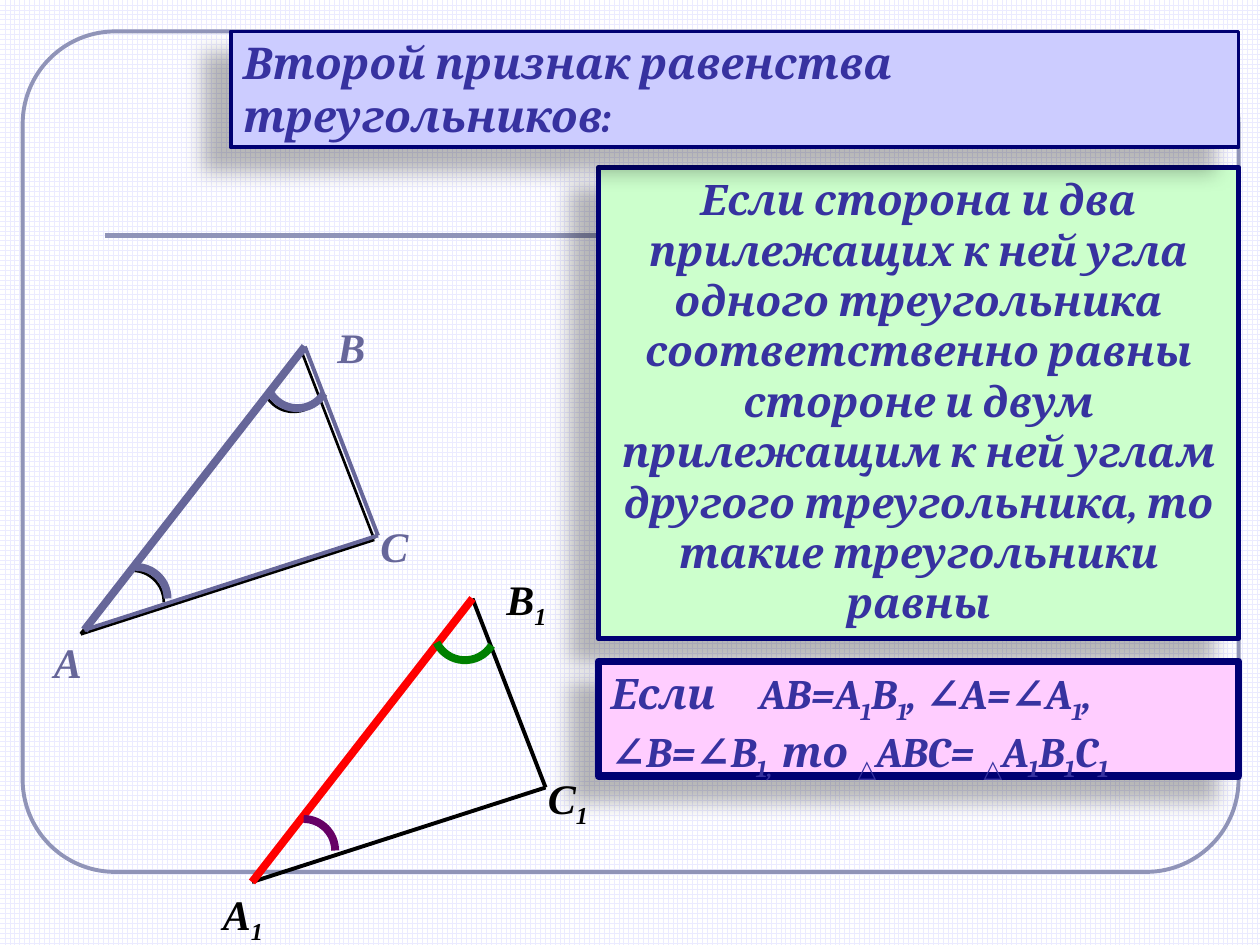
"""Build a geometry slide on the second congruence criterion for triangles."""
from dataclasses import dataclass
from math import cos, radians, sin

from lxml.etree import SubElement
from pptx import Presentation
from pptx.dml.color import RGBColor
from pptx.enum.dml import MSO_PATTERN
from pptx.enum.shapes import MSO_CONNECTOR, MSO_SHAPE
from pptx.enum.text import MSO_ANCHOR, MSO_AUTO_SIZE, PP_ALIGN
from pptx.oxml.ns import qn
from pptx.util import Inches, Pt

COLORS = {
    "grid": "EBEBFF", "white": "FFFFFF", "frame": "9094B8", "border": "000073",
    "text": "3732A0", "title": "CCCCFF", "rule": "CCFFCC", "formula": "FFCDFF",
    "black": "000000", "slate": "666699", "red": "FF0000", "purple": "660066",
    "green": "008000",
}
SIDE_B = (1.75, -2.25)
SIDE_C = (2.33, -0.75)
ARC_RADIUS = 0.25
ARC_STEPS = 16


@dataclass(frozen=True)
class Panel:
    box: tuple
    fill: str
    border: float
    text: str
    size: float
    alignment: PP_ALIGN
    anchor: MSO_ANCHOR = MSO_ANCHOR.TOP


@dataclass(frozen=True)
class Triangle:
    left: float
    bottom: float
    base_color: str
    side_color: str
    arc_a_color: str
    arc_b_color: str
    thin: float = 2.25
    thick: float = 4.5


@dataclass(frozen=True)
class Label:
    left: float
    top: float
    text: str
    color: str


TITLE = Panel((1.83, 0.25, 8, 0.92), "title", 2.25,
              "Второй признак равенства треугольников:", 25, PP_ALIGN.LEFT,
              MSO_ANCHOR.BOTTOM)
PANELS = [
    Panel((4.75, 1.33, 5.08, 3.74), "rule", 3,
          "Если сторона и два прилежащих к ней угла одного треугольника "
          "соответственно равны стороне и двум прилежащим к ней углам другого "
          "треугольника, то такие треугольники равны", 24, PP_ALIGN.CENTER),
    Panel((4.75, 5.25, 5.08, 0.91), "formula", 4.5,
          "Если\tAB=A_1_B_1_, ∠A=∠A_1_, ∠B=∠B_1,_ то _△_ABC= _△_A_1_B_1_C_1",
          24, PP_ALIGN.LEFT),
]
TRIANGLES = [
    Triangle(2, 7, "black", "red", "purple", "green"),
    Triangle(0.64, 5.03, "black", "black", "black", "black", thick=1.5),
    Triangle(0.67, 5, "slate", "slate", "slate", "slate"),
]
LABELS = [
    Label(1.67, 7, "A_1", "black"),
    Label(3.92, 4.5, "B_1", "black"),
    Label(4.25, 6.08, "C_1", "black"),
    Label(0.33, 5, "A", "slate"),
    Label(2.58, 2.5, "B", "slate"),
    Label(2.92, 4.08, "C", "slate"),
]


def color(name: str) -> RGBColor:
    return RGBColor.from_string(COLORS[name])


def set_line(shape, name: str, width: float) -> None:
    shape.line.color.rgb = color(name)
    shape.line.width = Pt(width)


def add_line(slide, start: tuple, end: tuple, name: str, width: float) -> None:
    points = [Inches(value) for value in (*start, *end)]
    connector = slide.shapes.add_connector(MSO_CONNECTOR.STRAIGHT, *points)
    set_line(connector, name, width)
    SubElement(connector._element.spPr, qn("a:effectLst"))


def add_arc(slide, center: tuple, angles: tuple, name: str, width: float) -> None:
    first, last = angles
    turns = [radians(first + (last - first) * step / ARC_STEPS)
             for step in range(ARC_STEPS + 1)]
    points = [(Inches(center[0] + ARC_RADIUS * cos(turn)),
               Inches(center[1] + ARC_RADIUS * sin(turn))) for turn in turns]
    builder = slide.shapes.build_freeform(*points[0])
    builder.add_line_segments(points[1:], close=False)
    shape = builder.convert_to_shape()
    shape.shadow.inherit = False
    shape.fill.background()
    set_line(shape, name, width)


def add_triangle(slide, triangle: Triangle) -> None:
    point_a = (triangle.left, triangle.bottom)
    point_b = (triangle.left + SIDE_B[0], triangle.bottom + SIDE_B[1])
    point_c = (triangle.left + SIDE_C[0], triangle.bottom + SIDE_C[1])
    bc_width = min(triangle.thin, triangle.thick)
    add_line(slide, point_a, point_c, triangle.base_color, triangle.thin)
    add_line(slide, point_b, point_c, triangle.base_color, bc_width)
    add_line(slide, point_a, point_b, triangle.side_color, triangle.thick)
    add_arc(slide, (point_a[0] + 0.41, point_a[1] - 0.25), (-90, 0),
            triangle.arc_a_color, triangle.thick)
    add_arc(slide, (point_b[0] - 0.06, point_b[1] + 0.24), (32, 154),
            triangle.arc_b_color, triangle.thick)


def write_text(shape, text: str, font_name: str, size: float, name: str,
               alignment: PP_ALIGN, anchor: MSO_ANCHOR) -> None:
    """Write text in which underscores switch subscript on and off."""
    frame = shape.text_frame
    frame.word_wrap = True
    frame.auto_size = MSO_AUTO_SIZE.NONE
    frame.vertical_anchor = anchor
    paragraph = frame.paragraphs[0]
    paragraph.alignment = alignment
    if "\t" in text:
        tabs = SubElement(paragraph._p.get_or_add_pPr(), qn("a:tabLst"))
        SubElement(tabs, qn("a:tab"), pos=str(Inches(1.18)), algn="l")
    for index, piece in enumerate(text.split("_")):
        run = paragraph.add_run()
        run.text = piece
        run.font.name = font_name
        run.font.size = Pt(size)
        run.font.bold = run.font.italic = True
        run.font.color.rgb = color(name)
        if index % 2:
            run._r.get_or_add_rPr().set("baseline", "-25000")


def add_shadow(shape) -> None:
    shape.shadow.inherit = False
    effects = shape._element.spPr.find(qn("a:effectLst"))
    shadow = SubElement(effects, qn("a:outerShdw"), blurRad=str(Pt(11.8)),
                        dist=str(Pt(19.7)), dir=str(141 * 60000),
                        algn="ctr", rotWithShape="0")
    tint = SubElement(shadow, qn("a:srgbClr"), val=COLORS["black"])
    SubElement(tint, qn("a:alpha"), val="28000")


def format_panel(shape, panel: Panel) -> None:
    shape.left, shape.top, shape.width, shape.height = map(Inches, panel.box)
    shape.fill.solid()
    shape.fill.fore_color.rgb = color(panel.fill)
    set_line(shape, "border", panel.border)
    add_shadow(shape)
    write_text(shape, panel.text, "Cambria", panel.size, "text",
               panel.alignment, panel.anchor)


def add_label(slide, label: Label) -> None:
    box = slide.shapes.add_textbox(Inches(label.left), Inches(label.top),
                                   Inches(0.67), Inches(0.5))
    write_text(box, label.text, "Times New Roman", 24, label.color,
               PP_ALIGN.LEFT, MSO_ANCHOR.TOP)


def main() -> None:
    presentation = Presentation()
    presentation.slide_width, presentation.slide_height = Inches(10), Inches(7.5)
    slide = presentation.slides.add_slide(presentation.slide_layouts[5])
    background = slide.background.fill
    background.patterned()
    background.pattern = MSO_PATTERN.LARGE_GRID
    background.fore_color.rgb = color("grid")
    background.back_color.rgb = color("white")

    frame = slide.shapes.add_shape(MSO_SHAPE.ROUNDED_RECTANGLE, Inches(0.18),
                                   Inches(0.25), Inches(9.65), Inches(6.67))
    frame.adjustments[0] = 0.11
    frame.shadow.inherit = False
    frame.fill.background()
    set_line(frame, "frame", 2.25)
    add_line(slide, (0.83, 1.87), (9.25, 1.87), "frame", 3)

    for panel in PANELS:
        format_panel(slide.shapes.add_shape(
            MSO_SHAPE.RECTANGLE, *map(Inches, panel.box)), panel)
    title = slide.shapes.title
    format_panel(title, TITLE)
    slide.shapes._spTree.append(title._element)
    for triangle in TRIANGLES:
        add_triangle(slide, triangle)
    for label in LABELS:
        add_label(slide, label)
    presentation.save("out.pptx")


if __name__ == "__main__":
    main()
